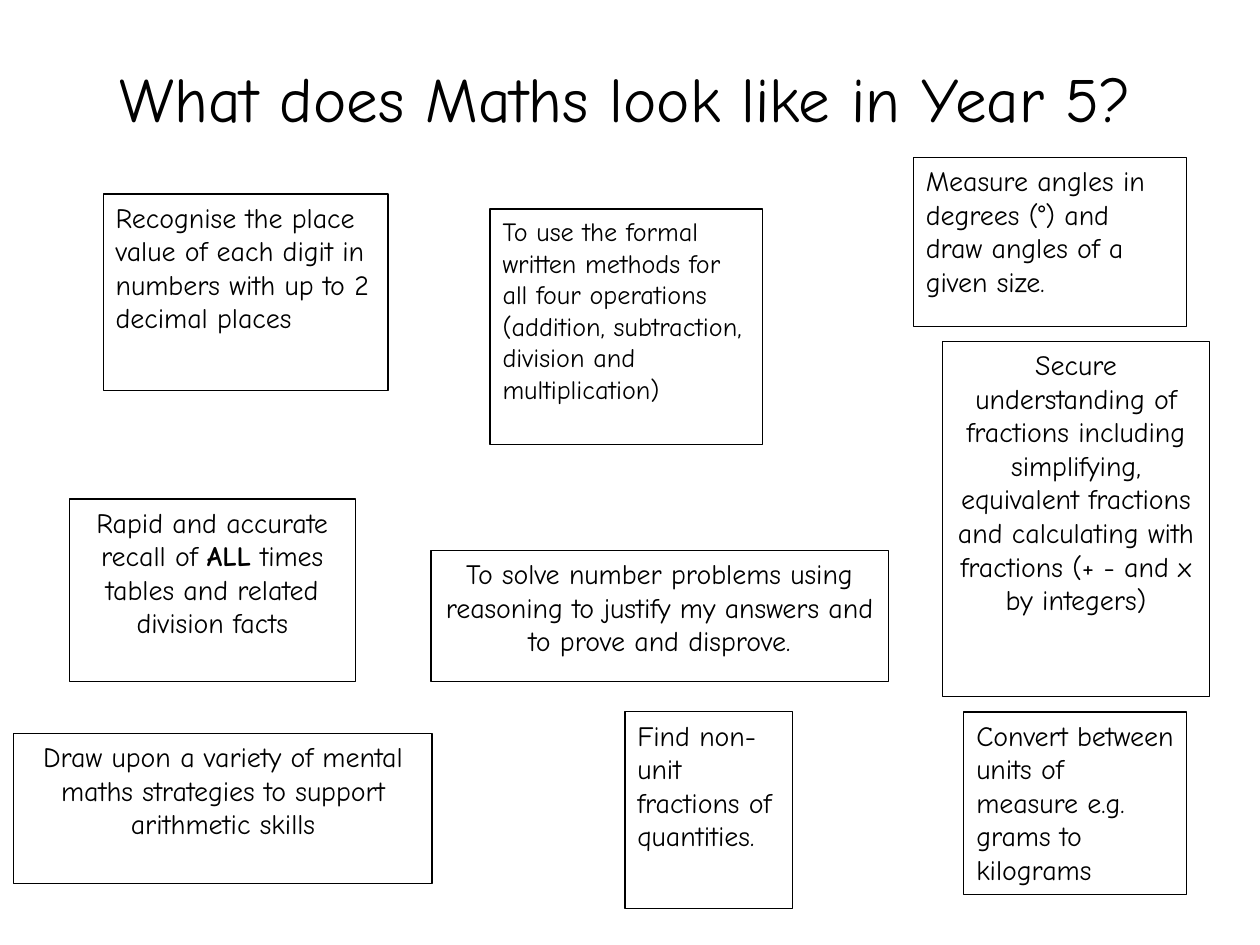
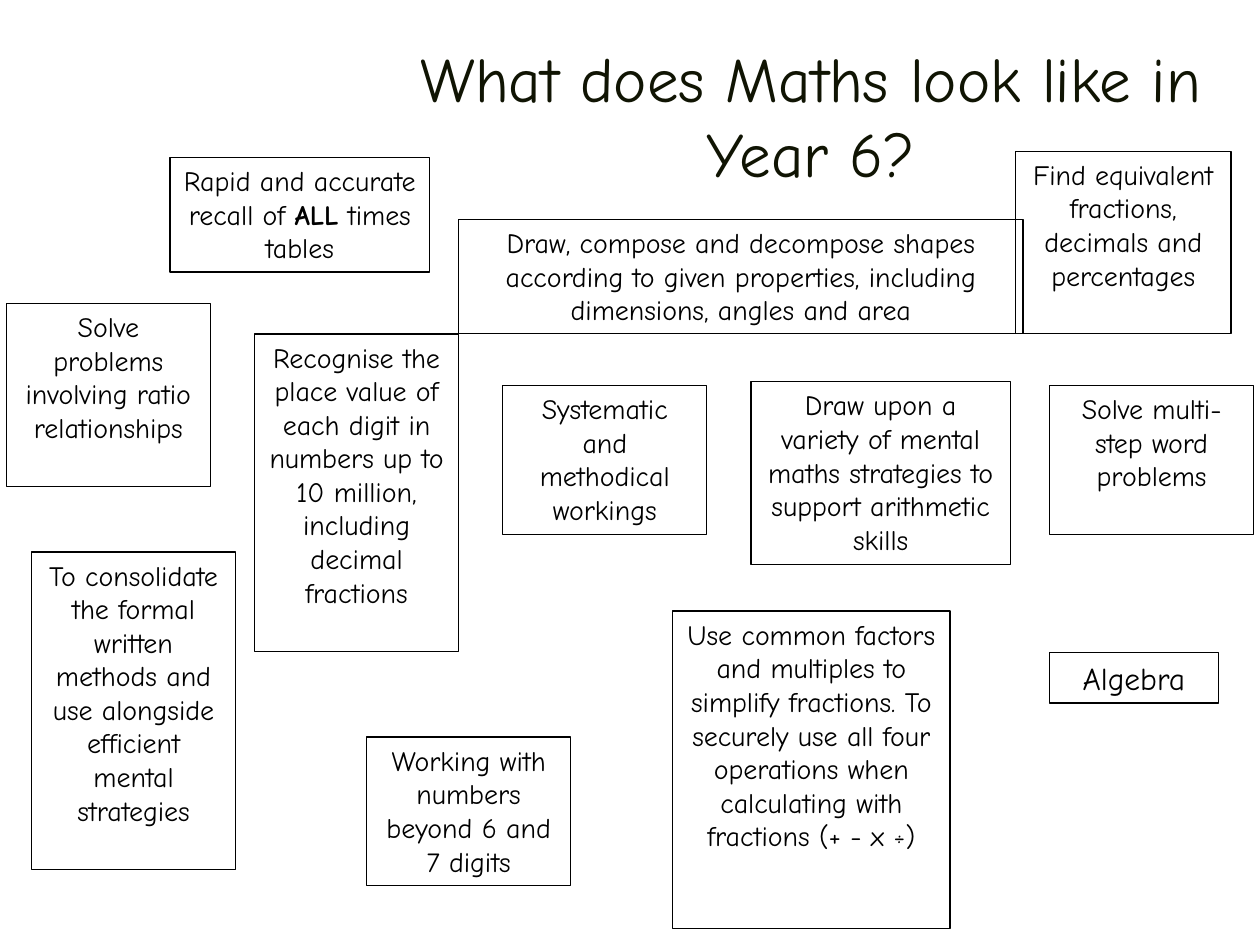
"""Build two slides on what Maths looks like in Years 5 and 6."""
from pptx import Presentation
from pptx.dml.color import RGBColor
from pptx.enum.shapes import MSO_SHAPE
from pptx.enum.text import MSO_ANCHOR, MSO_AUTO_SIZE, PP_ALIGN
from pptx.util import Inches, Pt

BLACK = RGBColor(0x00, 0x00, 0x00)
DARK_OLIVE = RGBColor(0x10, 0x14, 0x03)
FONT = "Comic Neue"
RECT = MSO_SHAPE.RECTANGLE
TOP = MSO_ANCHOR.TOP
NO_FIT = MSO_AUTO_SIZE.NONE
LEFT, CENTER = PP_ALIGN.LEFT, PP_ALIGN.CENTER
TITLE_ONLY = 5

YEAR_5 = [
    ((3.89, 1.66, 2.16, 1.87), "To use the formal written methods for all four operations "
     "(addition, subtraction, division and multiplication)", LEFT, 15),
    ((0.55, 3.96, 2.27, 1.45), "Rapid and accurate recall of **ALL** times tables and "
     "related division facts", CENTER, 16),
    ((0.11, 5.82, 3.32, 1.19), "Draw upon a variety of mental maths strategies to support "
     "arithmetic skills", CENTER, 16),
    ((7.65, 5.65, 1.77, 1.45), "Convert between units of measure e.g. grams to kilograms",
     LEFT, 16),
    ((7.48, 2.71, 2.12, 2.82), "Secure understanding of fractions including simplifying, "
     "equivalent fractions and calculating with fractions (+ - and x by integers)", CENTER, 16),
    ((3.42, 4.37, 3.63, 1.04), "To solve number problems using reasoning to justify my "
     "answers and to prove and disprove.", CENTER, 16),
    ((0.82, 1.54, 2.26, 1.56), "Recognise the place value of each digit in numbers with up "
     "to 2 decimal places", LEFT, 16),
    ((4.96, 5.65, 1.33, 1.56), "Find non-unit fractions of quantities.", LEFT, 16),
    ((7.25, 1.25, 2.17, 1.34), "Measure angles in degrees (°) and draw angles of a given "
     "size.", LEFT, 16),
]

YEAR_6 = [
    ((0.25, 4.38, 1.62, 2.52), "To consolidate the formal written methods and use alongside "
     "efficient mental strategies", CENTER, 16),
    ((3.99, 3.06, 1.62, 1.18), "Systematic and methodical workings", CENTER, 16),
    ((2.91, 5.85, 1.62, 1.18), "Working with numbers beyond 6 and 7 digits", CENTER, 16),
    ((1.35, 1.25, 2.06, 0.91), "Rapid and accurate recall of **ALL** times tables", CENTER, 16),
    ((0.05, 2.41, 1.62, 1.45), "Solve problems involving ratio relationships", CENTER, 16),
    ((5.96, 3.03, 2.06, 1.45), "Draw upon a variety of mental maths strategies to support "
     "arithmetic skills", CENTER, 16),
    ((8.33, 3.06, 1.62, 1.18), "Solve multi-step word problems", CENTER, 16),
    ((5.34, 4.85, 2.2, 2.52), "Use common factors and multiples to simplify fractions. To "
     "securely use all four operations when calculating with fractions (+ - x ÷)", CENTER, 16),
    ((8.33, 5.18, 1.34, 0.4), "Algebra", CENTER, 18),
    ((2.02, 2.65, 1.62, 2.52), "Recognise the place value of each digit in numbers up to "
     "10 million, including decimal fractions", CENTER, 16),
    ((3.64, 1.74, 4.48, 0.91), "Draw, compose and decompose shapes according to given "
     "properties, including dimensions, angles and area", CENTER, 16),
    ((8.06, 1.2, 1.71, 1.45), "Find equivalent fractions, decimals and percentages",
     CENTER, 16),
]


class Deck:
    """Hold the presentation, its text style and the current slide."""

    def __init__(self):
        """Start an empty 10 by 7.5 inch presentation."""
        self.prs = Presentation()
        self.prs.slide_width, self.prs.slide_height = Inches(10), Inches(7.5)
        self.s = None

    def add_text(self, sp, text, size, color, align):
        """Fill a shape with text, setting parts between ** in bold."""
        tf = sp.text_frame
        tf.word_wrap = True
        tf.auto_size = NO_FIT
        tf.vertical_anchor = TOP
        tf.margin_left = tf.margin_right = Inches(0.1)
        tf.margin_top = tf.margin_bottom = Inches(0.05)
        p = tf.paragraphs[0]
        p.alignment = align
        for i, part in enumerate(text.split("**")):
            r = p.add_run()
            r.text = part
            r.font.name = FONT
            r.font.size = Pt(size)
            r.font.bold = i % 2 == 1
            r.font.color.rgb = color

    def title_slide(self, text, at, color):
        """Add a slide and place its title."""
        self.s = self.prs.slides.add_slide(self.prs.slide_layouts[TITLE_ONLY])
        sp = self.s.shapes.title
        sp.left, sp.top, sp.width, sp.height = map(Inches, at)
        self.add_text(sp, text, 36, color, CENTER)

    def box(self, at, text, align, size):
        """Add an outlined box that states one skill."""
        sp = self.s.shapes.add_shape(RECT, *map(Inches, at))
        sp.shadow.inherit = False
        sp.fill.background()
        sp.line.color.rgb = BLACK
        sp.line.width = Pt(0.75)
        self.add_text(sp, text, size, BLACK, align)


def main():
    """Build both year slides and save them."""
    deck = Deck()
    years = [
        (5, (0.34, 0.42, 9.25, 0.71), BLACK, YEAR_5),
        (6, (3.02, 0.26, 6.83, 0.71), DARK_OLIVE, YEAR_6),
    ]
    for year, at, color, skills in years:
        deck.title_slide(f"What does Maths look like in Year {year}?", at, color)
        for skill in skills:
            deck.box(*skill)
    deck.prs.save("out.pptx")


if __name__ == "__main__":
    main()
